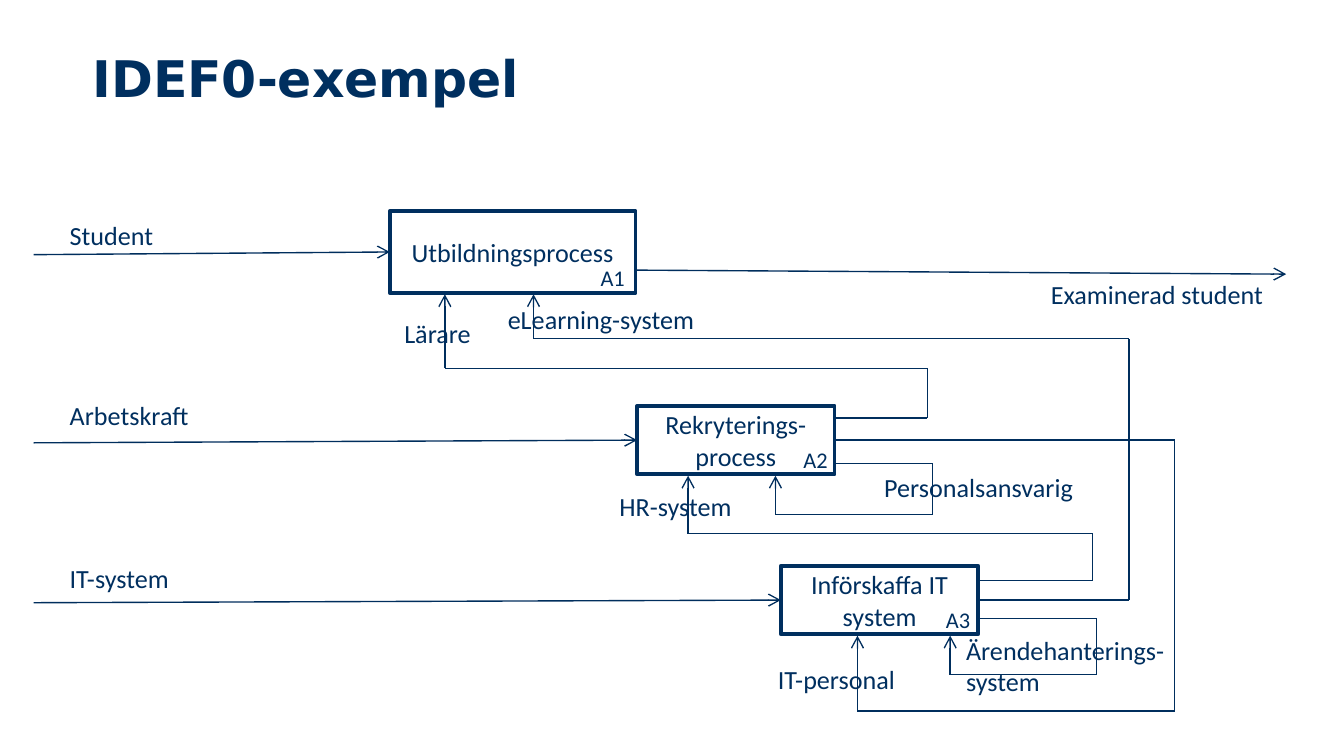
import pptx
import pptx.dml.color
import pptx.enum.shapes
import pptx.enum.text
import pptx.oxml.ns
import pptx.util
from dataclasses import dataclass
from lxml import etree

Inches = pptx.util.Inches
Pt = pptx.util.Pt
ALIGN = pptx.enum.text.PP_ALIGN
ANCHOR = pptx.enum.text.MSO_ANCHOR
LEFT_SIDE, RIGHT_SIDE = 1, 3


@dataclass(frozen=True)
class Theme:
    """Colours, fonts, type sizes and line widths of the slide."""
    ink: pptx.dml.color.RGBColor = pptx.dml.color.RGBColor(0x00, 0x2F, 0x5F)
    flow: pptx.dml.color.RGBColor = pptx.dml.color.RGBColor(0x00, 0x2E, 0x5D)
    paper: pptx.dml.color.RGBColor = pptx.dml.color.RGBColor(0xFF, 0xFF, 0xFF)
    title_font: str = "DejaVu Sans"
    body_font: str = "Calibri"
    title_size: int = 27
    body_size: int = 14
    code_size: int = 12
    box_line: float = 2
    flow_line: float = 0.75


THEME = Theme()


@dataclass
class Process:
    """A drawn process box with its edges in inches."""
    shape: object
    left: float
    top: float
    right: float
    bottom: float


def write(shape, text, align=ALIGN.LEFT, **formats):
    """Fill a shape with one paragraph per line of text."""
    styles = {"name": THEME.body_font, "size": Pt(THEME.body_size), "bold": False, **formats}
    frame = shape.text_frame
    for index, line in enumerate(text.split("\n")):
        paragraph = frame.add_paragraph() if index else frame.paragraphs[0]
        paragraph.alignment = align
        run = paragraph.add_run()
        run.text = line
        run.font.color.rgb = THEME.ink
        for name, value in styles.items():
            setattr(run.font, name, value)


def add_label(slide, box, text, wrap=True, **formats):
    """Add a text box that grows with its text."""
    label = slide.shapes.add_textbox(*map(Inches, box))
    label.text_frame.word_wrap = wrap
    label.text_frame.auto_size = pptx.enum.text.MSO_AUTO_SIZE.SHAPE_TO_FIT_TEXT
    write(label, text, **formats)


def add_title(slide, box, text):
    """Add the slide title."""
    title = slide.shapes.add_textbox(*map(Inches, box))
    title.text_frame.word_wrap = True
    write(title, text, name=THEME.title_font, size=Pt(THEME.title_size), bold=True)


def add_line(slide, start, end, arrow=False):
    """Add a straight flow line, with an open arrowhead at its end if asked."""
    connector = slide.shapes.add_connector(
        pptx.enum.shapes.MSO_CONNECTOR.STRAIGHT, *map(Inches, (*start, *end)))
    connector.line.color.rgb = THEME.flow
    connector.line.width = Pt(THEME.flow_line)
    qn = pptx.oxml.ns.qn
    if arrow:
        etree.SubElement(connector.line._ln, qn("a:tailEnd"), type="arrow")
    etree.SubElement(connector._element.spPr, qn("a:effectLst"))
    return connector


def add_process(slide, box, name, code, code_inset):
    """Add a process box with its code in the lower right corner."""
    left, top, width, height = box
    shape = slide.shapes.add_shape(
        pptx.enum.shapes.MSO_SHAPE.RECTANGLE, *map(Inches, box))
    shape.shadow.inherit = False
    shape.fill.solid()
    shape.fill.fore_color.rgb = THEME.paper
    shape.line.color.rgb = THEME.ink
    shape.line.width = Pt(THEME.box_line)
    shape.text_frame.word_wrap = True
    shape.text_frame.vertical_anchor = ANCHOR.MIDDLE
    write(shape, name, ALIGN.CENTER)
    process = Process(shape, left, top, left + width, top + height)
    add_label(slide, (process.right - code_inset, process.bottom - 0.26, 0.39, 0.3), code,
              wrap=False, size=Pt(THEME.code_size))
    return process


def add_input(slide, process, text, label_rise):
    """Add the labelled arrow from the slide's left edge into a process."""
    middle = (process.top + process.bottom) / 2
    arrow = add_line(slide, (0.25, middle + 0.02), (process.left, middle), arrow=True)
    arrow.end_connect(process.shape, LEFT_SIDE)
    add_label(slide, (0.42, middle - label_rise, 1.19, 0.34), text)


def add_mechanism(slide, source, target, exit_drop, reach, depth, entry, text, label_box):
    """Route a flow from the source's right side up into the target's bottom side."""
    middle = (source.bottom - source.top) / 2
    exit_y = source.top + (middle if exit_drop is None else exit_drop)
    turn_x = source.right + reach
    level = target.bottom + depth
    entry_x = target.left + entry
    points = [(source.right, exit_y), (turn_x, exit_y), (turn_x, level),
              (entry_x, level), (entry_x, target.bottom + 0.01)]
    lines = [add_line(slide, start, end, arrow=end is points[-1])
             for start, end in zip(points, points[1:])]
    if exit_drop is None:
        lines[0].begin_connect(source.shape, RIGHT_SIDE)
    shift_x, shift_y, width, height = label_box
    add_label(slide, (target.left + shift_x, target.bottom + shift_y, width, height), text)


def add_output(slide, process, text):
    """Add the labelled arrow from a process to the slide's right edge."""
    exit_y = process.top + 0.44
    add_line(slide, (process.right, exit_y), (9.57, exit_y + 0.03), arrow=True)
    add_label(slide, (7.72, exit_y + 0.01, 1.98, 0.34), text)


def add_diagram(slide):
    """Add the three processes and the flows between them."""
    education = add_process(slide, (2.9, 1.57, 1.83, 0.61), "Utbildningsprocess", "A1", 0.36)
    hiring = add_process(slide, (4.74, 3.02, 1.47, 0.51), "Rekryterings-process", "A2", 0.33)
    supply = add_process(slide, (5.81, 4.21, 1.47, 0.51), "Införskaffa IT system", "A3", 0.34)

    for process, text, label_rise in (
            (education, "Student", 0.29),
            (hiring, "Arbetskraft", 0.35),
            (supply, "IT-system", 0.33)):
        add_input(slide, process, text, label_rise)

    for mechanism in (
            (hiring, education, 0.09, 0.69, 0.56, 0.41, "Lärare", (0.01, 0.13, 0.83, 0.35)),
            (supply, education, None, 1.12, 0.34, 1.07, "eLearning-system",
             (0.78, 0.03, 2.27, 0.34)),
            (supply, hiring, 0.11, 0.85, 0.44, 0.38, "HR-system", (-0.23, 0.07, 2.27, 0.34)),
            (hiring, hiring, 0.43, 0.73, 0.3, 1.03, "Personalsansvarig",
             (1.74, -0.07, 2.27, 0.34)),
            (supply, supply, 0.39, 0.88, 0.3, 1.26, "Ärendehanterings-\nsystem",
             (1.28, -0.05, 2.64, 0.57)),
            (hiring, supply, None, 2.53, 0.57, 0.57, "IT-personal",
             (-0.12, 0.17, 2.27, 0.34))):
        add_mechanism(slide, *mechanism)

    add_output(slide, education, "Examinerad student")


def main():
    """Build and save the presentation."""
    presentation = pptx.Presentation()
    presentation.slide_width = Inches(10)
    presentation.slide_height = presentation.slide_width * 9 // 16
    slide = presentation.slides.add_slide(presentation.slide_layouts[6])
    add_title(slide, (0.59, 0.3, 6.75, 0.94), "IDEF0-exempel")
    add_diagram(slide)
    presentation.save("out.pptx")


if __name__ == "__main__":
    main()
